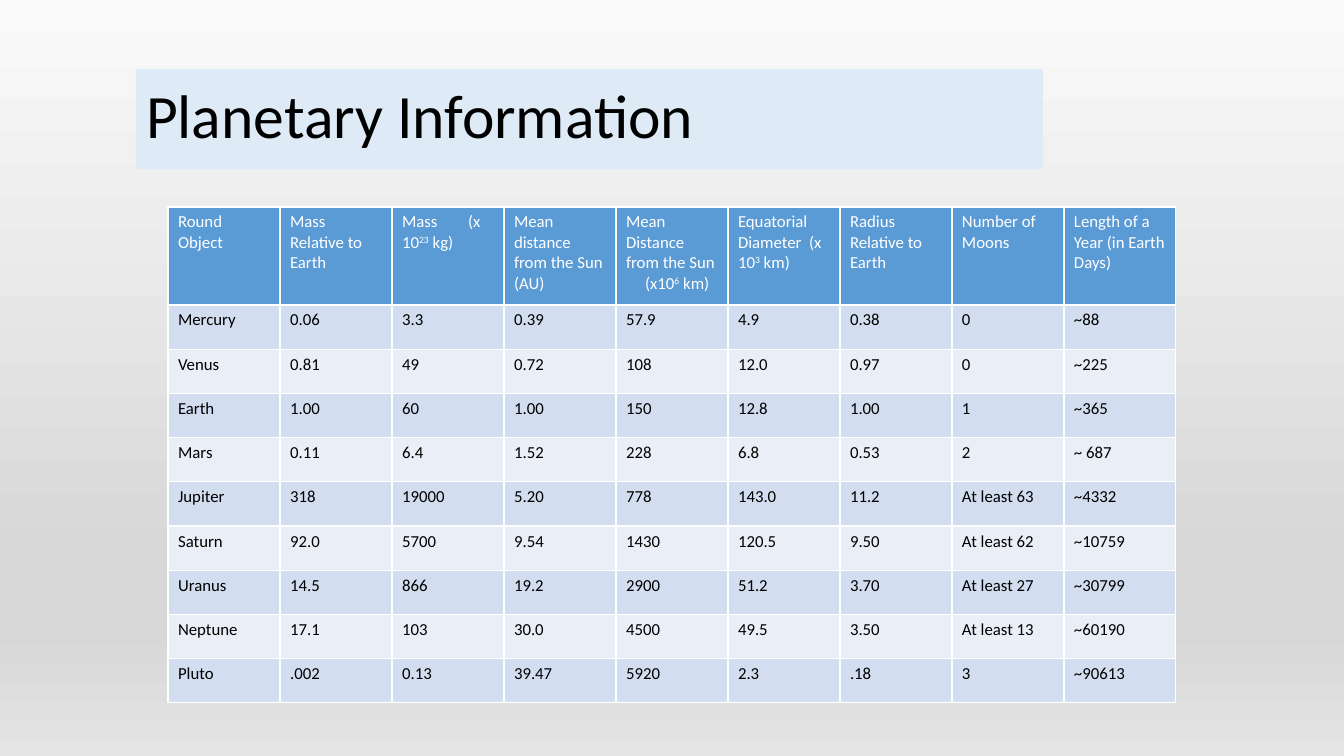
from pptx import Presentation
from pptx import util as u
from pptx.dml.color import RGBColor
from pptx.enum import text
from pptx.oxml.ns import qn
from lxml import etree

PX = 914400 / 100.8
FONT = "Calibri"
WHITE, BLACK = "FFFFFF", "000000"
TITLE_FILL, HEADER_FILL = "DEEBF7", "5B9BD5"
BAND_FILLS = ("D2DEEF", "EAEFF7")
BACKGROUND_STOPS = ((0, "FAFAFA"), (74, "D7D7D7"), (83, "D7D7D7"), (100, "E4E4E4"))

# Header text with ^superscripts^, and the tab stop in px where one is used
HEADERS = (
    ("Round Object", 0),
    ("Mass Relative to Earth", 0),
    ("Mass\t(x 10^23^ kg)", 66),
    ("Mean distance from the Sun (AU)", 0),
    ("Mean Distance from the Sun\n\t(x10^6^ km)", 19),
    ("Equatorial Diameter\t(x 10^3^ km)", 71),
    ("Radius Relative to Earth", 0),
    ("Number of Moons", 0),
    ("Length of a Year (in Earth Days)", 0),
)
PLANETS = (
    ("Mercury", "0.06", "3.3", "0.39", "57.9", "4.9", "0.38", "0", "~88"),
    ("Venus", "0.81", "49", "0.72", "108", "12.0", "0.97", "0", "~225"),
    ("Earth", "1.00", "60", "1.00", "150", "12.8", "1.00", "1", "~365"),
    ("Mars", "0.11", "6.4", "1.52", "228", "6.8", "0.53", "2", "~ 687"),
    ("Jupiter", "318", "19000", "5.20", "778", "143.0", "11.2", "At least 63", "~4332"),
    ("Saturn", "92.0", "5700", "9.54", "1430", "120.5", "9.50", "At least 62", "~10759"),
    ("Uranus", "14.5", "866", "19.2", "2900", "51.2", "3.70", "At least 27", "~30799"),
    ("Neptune", "17.1", "103", "30.0", "4500", "49.5", "3.50", "At least 13", "~60190"),
    ("Pluto", ".002", "0.13", "39.47", "5920", "2.3", ".18", "3", "~90613"),
)


def px(length):
    return u.Emu(round(length * PX))


def color(value):
    return RGBColor.from_string(value)


def add_xml(parent, tag, **attributes):
    return etree.SubElement(parent, qn(tag), attributes)


def set_font(paragraph, size, value):
    font = paragraph.font
    font.name, font.size, font.bold = FONT, u.Pt(size), False
    font.color.rgb = color(value)


def set_background(slide):
    fill = slide.background.fill
    fill.gradient()
    fill.gradient_angle = 270
    stops = slide.element.find(".//" + qn("a:gsLst"))
    for stop in list(stops):
        stops.remove(stop)
    for position, value in BACKGROUND_STOPS:
        stop = add_xml(stops, "a:gs", pos=str(position * 1000))
        add_xml(stop, "a:srgbClr", val=value)


def set_title(slide, title):
    shape = slide.shapes.title
    shape.left, shape.top, shape.width, shape.height = px(136), px(69), px(907), px(100)
    shape.fill.solid()
    shape.fill.fore_color.rgb = color(TITLE_FILL)
    frame = shape.text_frame
    frame.text = title
    frame.word_wrap = True
    frame.auto_size = text.MSO_AUTO_SIZE.NONE
    frame.vertical_anchor = text.MSO_ANCHOR.MIDDLE
    paragraph = frame.paragraphs[0]
    paragraph.alignment = text.PP_ALIGN.LEFT
    paragraph.line_spacing = 0.9
    set_font(paragraph, 44, BLACK)


def format_cell(cell, fill):
    properties = cell._tc.get_or_add_tcPr()
    for side in ("a:lnL", "a:lnR", "a:lnT", "a:lnB"):
        line = add_xml(properties, side, w=str(u.Pt(1)))
        add_xml(add_xml(line, "a:solidFill"), "a:srgbClr", val=WHITE)
    cell.fill.solid()
    cell.fill.fore_color.rgb = color(fill)


def write_cell(cell, content, value, tab=0):
    paragraph = cell.text_frame.paragraphs[0]
    if tab:
        tabs = add_xml(paragraph._p.get_or_add_pPr(), "a:tabLst")
        add_xml(tabs, "a:tab", pos=str(px(tab)), algn="l")
    for number, line in enumerate(content.split("\n")):
        if number:
            paragraph.add_line_break()
        for index, piece in enumerate(line.split("^")):
            run = paragraph.add_run()
            run.text = piece
            if index % 2:
                run.font._element.set("baseline", "30000")
    set_font(paragraph, 12, value)


def add_planet_table(slide):
    width, height, header_height = 1008, 496, 98
    frame = slide.shapes.add_table(len(PLANETS) + 1, len(HEADERS),
                                   px(168), px(207), px(width), px(height))
    table = frame.table
    table.first_row = table.horz_banding = False
    for column in table.columns:
        column.width = px(width / len(HEADERS))
    for row in table.rows:
        row.height = px((height - header_height) / len(PLANETS))
    table.rows[0].height = px(header_height)

    # Header row
    for column, (content, tab) in enumerate(HEADERS):
        cell = table.cell(0, column)
        format_cell(cell, HEADER_FILL)
        write_cell(cell, content, WHITE, tab)

    # One banded row per planet
    for row, planet in enumerate(PLANETS):
        for column, content in enumerate(planet):
            cell = table.cell(row + 1, column)
            format_cell(cell, BAND_FILLS[row % 2])
            write_cell(cell, content, BLACK)


def main():
    presentation = Presentation()
    presentation.slide_width, presentation.slide_height = px(1344), px(756)
    slide = presentation.slides.add_slide(presentation.slide_layouts[5])
    set_background(slide)
    set_title(slide, "Planetary Information")
    add_planet_table(slide)
    presentation.save("out.pptx")


if __name__ == "__main__":
    main()
